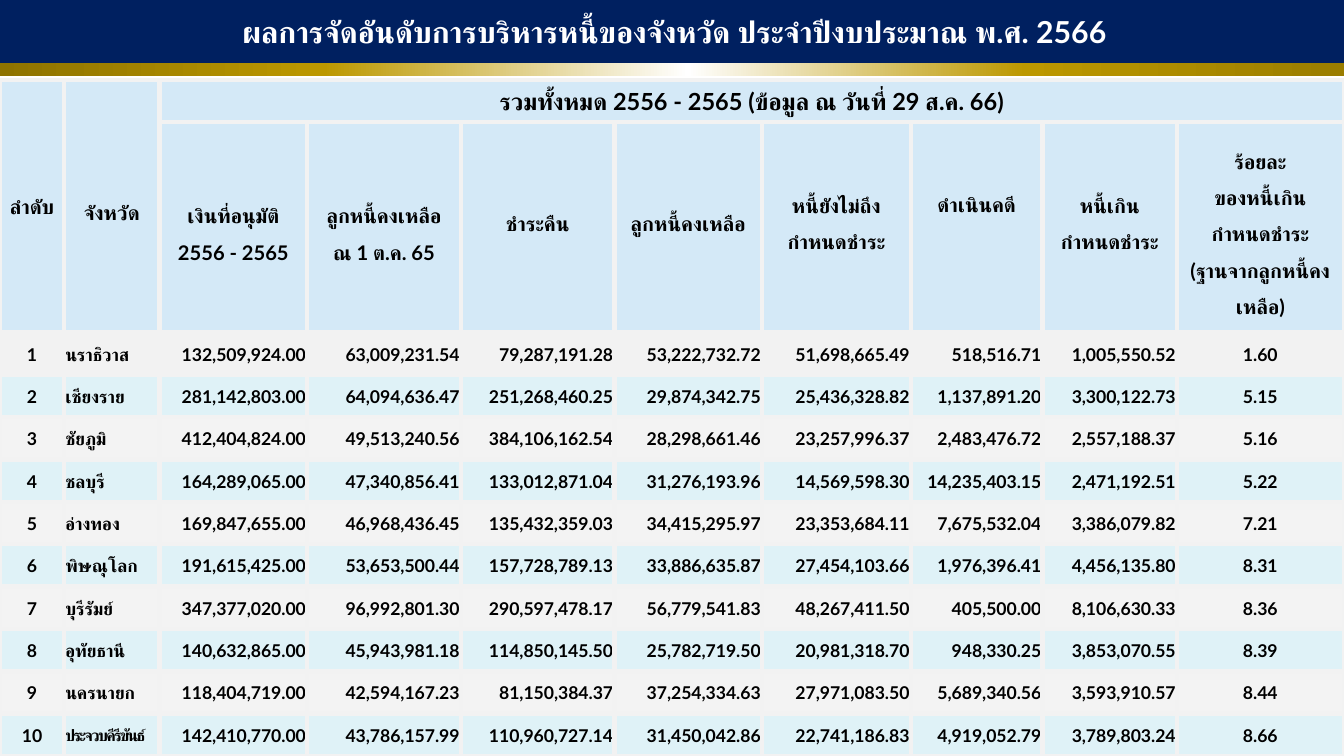
from pptx import Presentation
from pptx import util as u
from pptx.dml.color import RGBColor
from pptx.enum import shapes, text
from pptx.oxml import parse_xml
from pptx.oxml.ns import nsdecls, qn
from lxml import etree

FONT = "Lato"
NAVY, WHITE, BLACK = "002060", "FFFFFF", "000000"
HEAD, GREY, AQUA = "CAE4F6", "F2F2F2", "D7EFF5"
GOLD = [(0, "8E7300"), (24, "BC9800"), (51, "FFFFFF"), (76, "BC9800"), (100, "9A7D00")]
LEFT, CENTER, RIGHT = text.PP_ALIGN.LEFT, text.PP_ALIGN.CENTER, text.PP_ALIGN.RIGHT

COLS = [0.53, 0.79, 1.22, 1.27, 1.27, 1.22, 1.23, 1.09, 1.11, 1.38]
ROWS = [0.35, 1.74] + [0.35] * 10
ALIGNS = [CENTER, LEFT] + [RIGHT] * 7 + [CENTER]

# Heading lines, line spacing and bottom inset of each column
SIDE_HEADS = [(["ลำดับ"], 1.5, 0.1), (["จังหวัด"], 1.5, 0)]
GROUP_HEAD = "รวมทั้งหมด 2556 - 2565 (ข้อมูล ณ วันที่ 29 ส.ค. 66)"
HEADS = [
    (["เงินที่อนุมัติ", "2556 - 2565"], 1.5, 0),
    (["ลูกหนี้คงเหลือ", "ณ 1 ต.ค. 65"], 1.5, 0),
    (["ชำระคืน"], 1.5, 0.17),
    (["ลูกหนี้คงเหลือ"], 1.5, 0.17),
    (["หนี้ยังไม่ถึง", "กำหนดชำระ"], 1.5, 0.17),
    (["ดำเนินคดี"], 1, 0.38),
    (["หนี้เกิน", "กำหนดชำระ"], 1.5, 0.17),
    (["ร้อยละ", "ของหนี้เกิน", "กำหนดชำระ", "(ฐานจากลูกหนี้คงเหลือ)"], 1.5, 0),
]
PROVINCES = [
    ("นราธิวาส", 132509924.00, 63009231.54, 79287191.28, 53222732.72, 51698665.49, 518516.71, 1005550.52, 1.60),
    ("เชียงราย", 281142803.00, 64094636.47, 251268460.25, 29874342.75, 25436328.82, 1137891.20, 3300122.73, 5.15),
    ("ชัยภูมิ", 412404824.00, 49513240.56, 384106162.54, 28298661.46, 23257996.37, 2483476.72, 2557188.37, 5.16),
    ("ชลบุรี", 164289065.00, 47340856.41, 133012871.04, 31276193.96, 14569598.30, 14235403.15, 2471192.51, 5.22),
    ("อ่างทอง", 169847655.00, 46968436.45, 135432359.03, 34415295.97, 23353684.11, 7675532.04, 3386079.82, 7.21),
    ("พิษณุโลก", 191615425.00, 53653500.44, 157728789.13, 33886635.87, 27454103.66, 1976396.41, 4456135.80, 8.31),
    ("บุรีรัมย์", 347377020.00, 96992801.30, 290597478.17, 56779541.83, 48267411.50, 405500.00, 8106630.33, 8.36),
    ("อุทัยธานี", 140632865.00, 45943981.18, 114850145.50, 25782719.50, 20981318.70, 948330.25, 3853070.55, 8.39),
    ("นครนายก", 118404719.00, 42594167.23, 81150384.37, 37254334.63, 27971083.50, 5689340.56, 3593910.57, 8.44),
    ("ประจวบคีรีขันธ์", 142410770.00, 43786157.99, 110960727.14, 31450042.86, 22741186.83, 4919052.79, 3789803.24, 8.66),
]


def rgb(value):
    return RGBColor.from_string(value)


def set_all(obj, values):
    for name, value in values.items():
        setattr(obj, name, value)


class Deck:
    def __init__(self, prs):
        self.s = prs.slides.add_slide(prs.slide_layouts[5])

    def add_lines(self, tf, lines, size, color=BLACK, align=CENTER, spacing=1.0, tracking=0):
        for i, line in enumerate(lines):
            p = tf.paragraphs[0] if i == 0 else tf.add_paragraph()
            set_all(p, {"alignment": align, "line_spacing": spacing, "space_before": u.Pt(0)})
            r = p.add_run()
            r.text = line
            set_all(r.font, {"name": FONT, "size": u.Pt(size), "bold": True})
            r.font.color.rgb = rgb(color)
            rPr = r._r.get_or_add_rPr()
            etree.SubElement(rPr, qn("a:cs")).set("typeface", FONT)
            if tracking:
                rPr.set("spc", str(tracking * 100))

    def title(self, line, width, height):
        sp = self.s.shapes.title
        set_all(sp, {"left": 0, "top": 0, "width": u.Inches(width), "height": u.Inches(height)})
        sp.fill.solid()
        sp.fill.fore_color.rgb = rgb(NAVY)
        set_all(sp.text_frame, {"vertical_anchor": text.MSO_ANCHOR.MIDDLE, "word_wrap": True,
                                "auto_size": text.MSO_AUTO_SIZE.NONE})
        self.add_lines(sp.text_frame, [line], 18, WHITE)

    def gradient_band(self, width, height, stops):
        sp = self.s.shapes.add_shape(shapes.MSO_SHAPE.RECTANGLE, 0, 0, u.Inches(width), u.Inches(height))
        sp.shadow.inherit = False
        sp.line.fill.background()
        sp.fill.gradient()
        sp.fill.gradient_angle = 0
        stop_list = sp.element.spPr.find(".//" + qn("a:gsLst"))
        stop_list.clear()
        for pos, color in stops:
            stop = etree.SubElement(stop_list, qn("a:gs"), pos=str(pos * 1000))
            etree.SubElement(stop, qn("a:srgbClr"), val=color)
        # The band lies behind the title
        self.s.shapes.title.element.addprevious(sp.element)

    def table(self, top, cols, rows):
        frame = self.s.shapes.add_table(len(rows), len(cols), 0, u.Inches(top),
                                        u.Inches(sum(cols)), u.Inches(sum(rows)))
        table = frame.table
        set_all(table, {"first_row": False, "horz_banding": False})
        for col, width in zip(table.columns, cols):
            col.width = u.Inches(width)
        for row, height in zip(table.rows, rows):
            row.height = u.Inches(height)
        return table

    def cell_box(self, cell, color, opacity):
        set_all(cell, {"vertical_anchor": text.MSO_ANCHOR.MIDDLE, "margin_left": u.Inches(0.01),
                       "margin_right": u.Inches(0.01), "margin_top": u.Inches(0.01), "margin_bottom": 0})
        cell.fill.solid()
        cell.fill.fore_color.rgb = rgb(color)
        tcPr = cell._tc.get_or_add_tcPr()
        if opacity < 100:
            clr = tcPr.find(".//" + qn("a:srgbClr"))
            etree.SubElement(clr, qn("a:alpha"), val=str(opacity * 1000))
        for i, side in enumerate(["lnL", "lnR", "lnT", "lnB"]):
            tcPr.insert(i, parse_xml(
                f'<a:{side} {nsdecls("a")} w="{u.Pt(3)}"><a:solidFill>'
                f'<a:srgbClr val="{GREY}"/></a:solidFill></a:{side}>'))

    def heading(self, cell, lines, spacing, bottom):
        cell.margin_bottom = u.Inches(bottom)
        self.add_lines(cell.text_frame, lines, 12, spacing=spacing)


def main():
    prs = Presentation()
    set_all(prs, {"slide_width": u.Inches(11.11), "slide_height": u.Inches(6.25)})
    deck = Deck(prs)

    # Title bar with gold band
    deck.title("ผลการจัดอันดับการบริหารหนี้ของจังหวัด ประจำปีงบประมาณ พ.ศ. 2566", 11.15, 0.52)
    deck.gradient_band(11.15, 0.63, GOLD)

    # Table grid and fills
    table = deck.table(0.66, COLS, ROWS)
    row_fills = [(HEAD, 80)] * 2 + [(GREY, 100)] + [(AQUA, 80), (GREY, 90)] * 4 + [(AQUA, 80)]
    for i, (color, opacity) in enumerate(row_fills):
        for j in range(len(COLS)):
            deck.cell_box(table.cell(i, j), color, opacity)

    # Headings
    for j, head in enumerate(SIDE_HEADS):
        table.cell(0, j).merge(table.cell(1, j))
        deck.heading(table.cell(0, j), *head)
    table.cell(0, 2).merge(table.cell(0, 9))
    deck.add_lines(table.cell(0, 2).text_frame, [GROUP_HEAD], 14)
    for j, head in enumerate(HEADS, 2):
        deck.heading(table.cell(1, j), *head)

    # Ranked provinces
    for rank, (name, *amounts) in enumerate(PROVINCES, 1):
        values = [str(rank), name] + [f"{amount:,.2f}" for amount in amounts]
        for j, value in enumerate(values):
            tight = len(value) > 14 and j == 1
            deck.add_lines(table.cell(rank + 1, j).text_frame, [value], 9.5 if tight else 10.5,
                           align=ALIGNS[j], tracking=-1 if tight else 0)

    prs.save("out.pptx")


if __name__ == "__main__":
    main()
